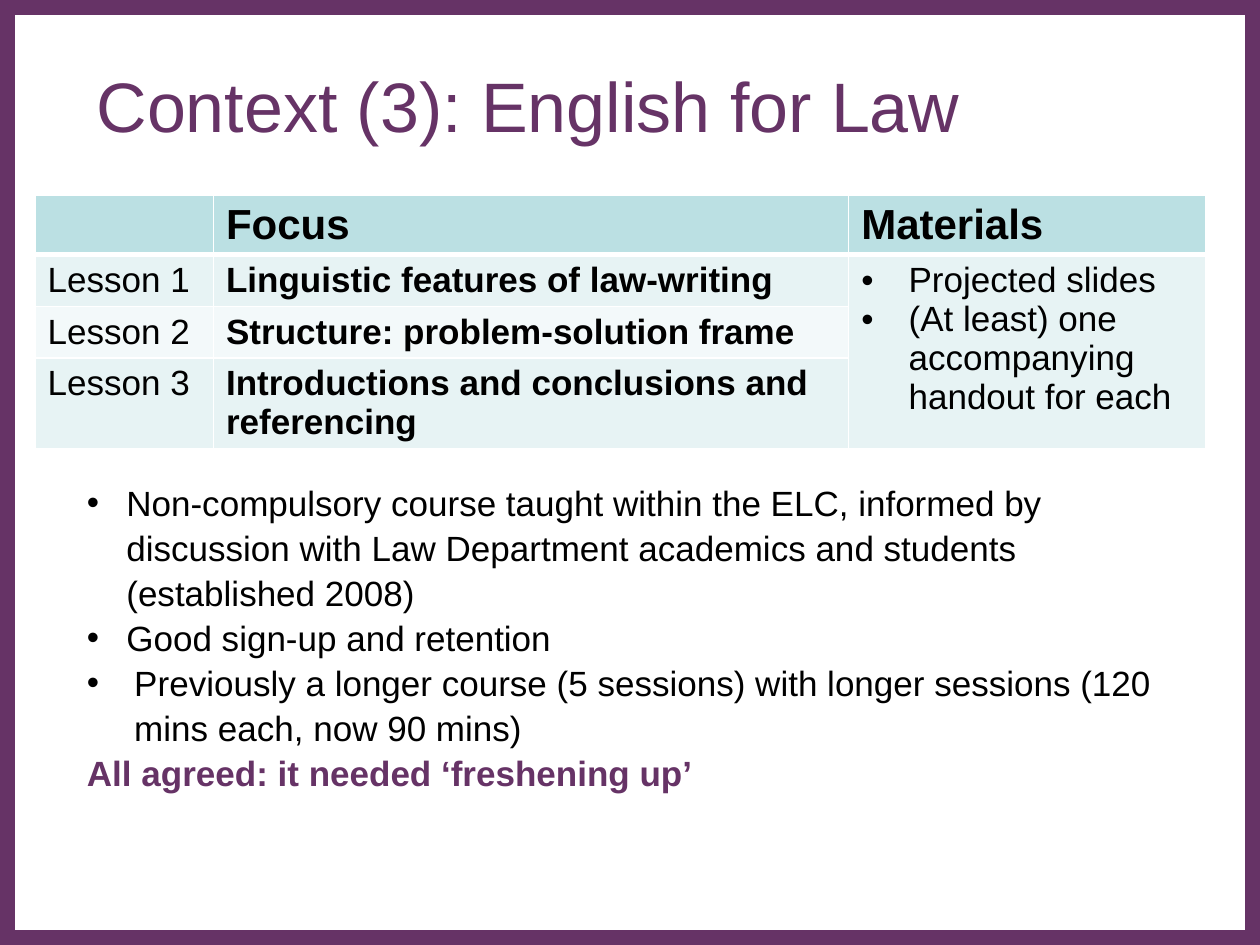
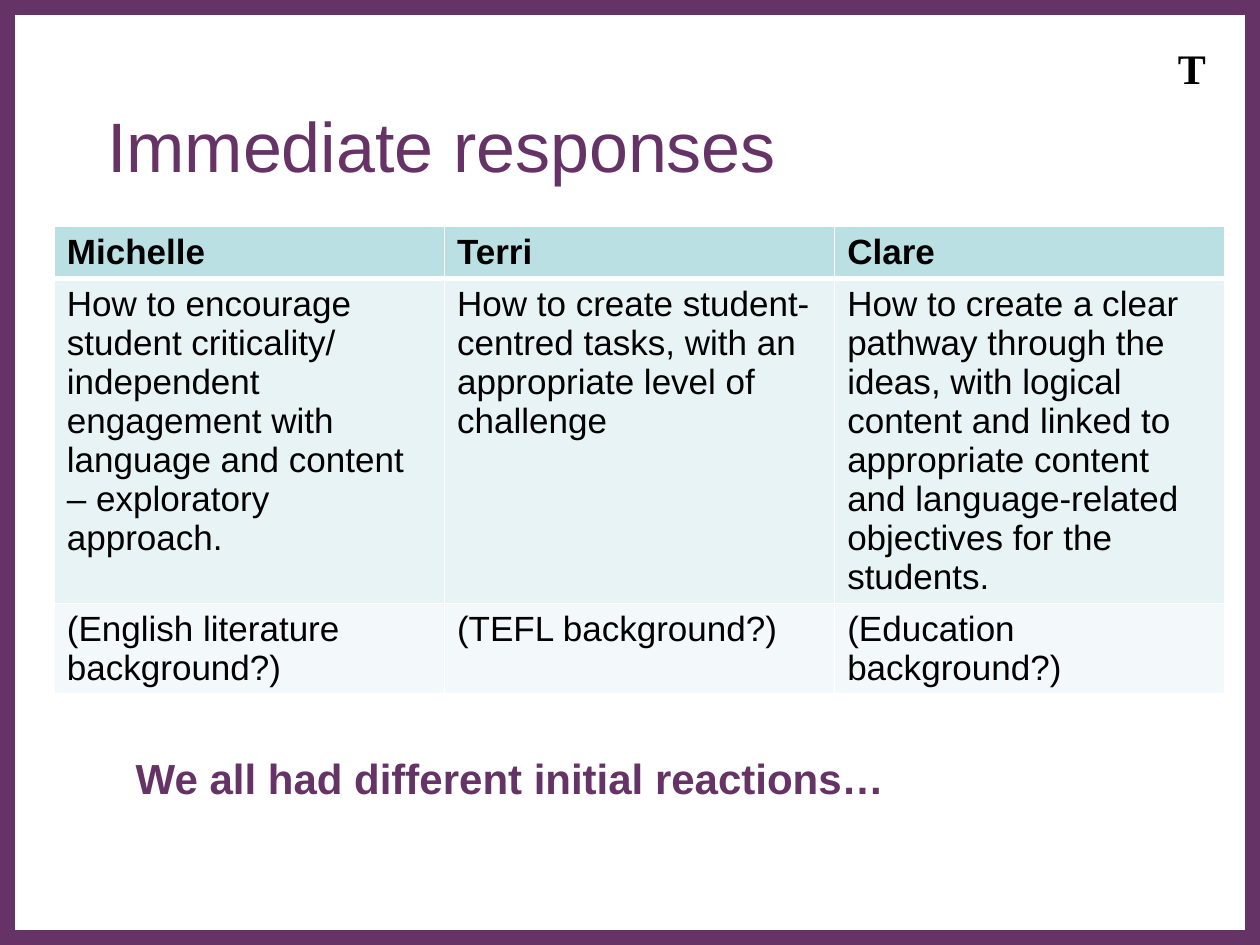
from lxml import etree
from pptx import Presentation
from pptx.dml.color import RGBColor
from pptx.enum.shapes import MSO_SHAPE
from pptx.enum.text import MSO_ANCHOR, MSO_AUTO_SIZE, PP_ALIGN
from pptx.oxml.ns import qn
from pptx.util import Pt

RECTANGLE = MSO_SHAPE.RECTANGLE
MIDDLE, TOP = MSO_ANCHOR.MIDDLE, MSO_ANCHOR.TOP
NO_AUTOFIT = MSO_AUTO_SIZE.NONE
LEFT = PP_ALIGN.LEFT

COLORS = {"purple": "663366", "white": "FFFFFF", "black": "000000",
          "header": "BBE0E3", "odd": "E7F3F4", "even": "F3F9FA"}
PAGE_WIDTH, PAGE_HEIGHT, FRAME = 720, 540, 8.64
TITLE_AND_BODY, TITLE_ONLY = 1, 5
TITLE_SIZE, HEADING_SIZE, TEXT_SIZE = 40, 24, 20
ROW_HEIGHT = 29.2


def color(name):
    return RGBColor.from_string(COLORS[name])


class Deck:
    """Holds the shared style and the current page."""

    def __init__(self):
        self.presentation = Presentation()
        self.presentation.slide_width = Pt(PAGE_WIDTH)
        self.presentation.slide_height = Pt(PAGE_HEIGHT)
        self.page = None

    def add_page(self, layout, title, left, top):
        layouts = self.presentation.slide_layouts
        first = self.page is None
        self.page = self.presentation.slides.add_slide(layouts[layout])
        if first:
            self.add_master_frame()
        box = self.page.shapes.title
        self.place(box, left, top, 612, 90)
        box.text_frame.vertical_anchor = MIDDLE
        box.text_frame.auto_size = NO_AUTOFIT
        self.set_lines(box.text_frame, [title], TITLE_SIZE, "purple")

    def add_master_frame(self):
        """Put the purple border and white sheet on the master, behind all else."""
        tree = self.presentation.slide_master.shapes._spTree
        for order, (name, inset) in enumerate([("purple", 0), ("white", FRAME)]):
            panel = self.page.shapes.add_shape(
                RECTANGLE, Pt(inset), Pt(inset),
                Pt(PAGE_WIDTH - 2 * inset), Pt(PAGE_HEIGHT - 2 * inset))
            panel.shadow.inherit = False
            panel.fill.solid()
            panel.fill.fore_color.rgb = color(name)
            panel.line.fill.background()
            panel._element.nvSpPr.cNvPr.set("id", str(101 + order))
            tree.insert(2 + order, panel._element)

    def place(self, box, left, top, width, height):
        box.left, box.top = Pt(left), Pt(top)
        box.width, box.height = Pt(width), Pt(height)

    def style(self, para, size, ink="black", bold=False, font="Arial", indent=None):
        """Format a paragraph; an indent gives it a hanging bullet."""
        properties = para._p.get_or_add_pPr()
        hang = Pt(indent or 0)
        properties.set("marL", str(hang))
        properties.set("indent", str(-hang))
        if indent:
            etree.SubElement(properties, qn("a:buFont"), typeface="Arial")
            etree.SubElement(properties, qn("a:buChar"), char="•")
        else:
            etree.SubElement(properties, qn("a:buNone"))
        para.alignment = LEFT
        para.space_before = Pt(0)
        para.font.name, para.font.size, para.font.bold = font, Pt(size), bold
        para.font.color.rgb = color(ink)

    def set_lines(self, frame, lines, *style, **options):
        frame.text = "\n".join(lines)
        for para in frame.paragraphs:
            self.style(para, *style, **options)

    def add_list(self, items, left, top, width, height):
        """Fill the body placeholder with (text, style options) items."""
        box = self.page.placeholders[1]
        self.place(box, left, top, width, height)
        frame = box.text_frame
        frame.auto_size, frame.vertical_anchor = NO_AUTOFIT, TOP
        frame.text = "\n".join(text for text, _ in items)
        for para, (_, options) in zip(frame.paragraphs, items):
            self.style(para, TEXT_SIZE, **options)
            para.line_spacing = 1.07

    def add_text(self, text, left, top, width, height, ink, font="Arial"):
        box = self.page.shapes.add_textbox(Pt(left), Pt(top), Pt(width), Pt(height))
        box.text_frame.word_wrap = True
        self.set_lines(box.text_frame, [text], HEADING_SIZE, ink, True, font)

    def add_border(self, cell, side, width):
        line = etree.SubElement(cell._tc.get_or_add_tcPr(), qn("a:ln" + side),
                                w=str(Pt(width)))
        fill = etree.SubElement(line, qn("a:solidFill"))
        etree.SubElement(fill, qn("a:srgbClr"), val=COLORS["white"])

    def add_table(self, rows, left, top, widths, header_size=TEXT_SIZE,
                  bold_column=None):
        """Cells are lists of lines; returns the table."""
        table = self.page.shapes.add_table(
            len(rows), len(widths), Pt(left), Pt(top),
            Pt(sum(widths)), Pt(ROW_HEIGHT * len(rows))).table
        for column, width in zip(table.columns, widths):
            column.width = Pt(width)
        for r, row in enumerate(rows):
            table.rows[r].height = Pt(ROW_HEIGHT)
            band = "header" if r == 0 else "odd" if r % 2 else "even"
            for c, lines in enumerate(row):
                cell = table.cell(r, c)
                for side in "LRTB":
                    heavy = (r, side) in [(0, "B"), (1, "T")]
                    self.add_border(cell, side, 3 if heavy else 1)
                cell.fill.solid()
                cell.fill.fore_color.rgb = color(band)
                if lines:
                    self.set_lines(cell.text_frame, lines,
                                   TEXT_SIZE if r else header_size,
                                   bold=r == 0 or c == bold_column)
        return table


def build_context(deck):
    deck.add_page(TITLE_AND_BODY, "Context (3): English for Law", 48, 15)

    # Lesson overview
    materials = ["Projected slides", "(At least) one accompanying handout for each"]
    table = deck.add_table([
        [[], ["Focus"], ["Materials"]],
        [["Lesson 1"], ["Linguistic features of law-writing"], []],
        [["Lesson 2"], ["Structure: problem-solution frame"], []],
        [["Lesson 3"], ["Introductions and conclusions and referencing"], []],
    ], 20, 111.5, [102, 363, 204], HEADING_SIZE, bold_column=1)
    shared_cell = table.cell(1, 2)
    shared_cell.merge(table.cell(3, 2))
    deck.set_lines(shared_cell.text_frame, materials, TEXT_SIZE, indent=27)

    # Course background
    deck.add_list([
        ("Non-compulsory course taught within the ELC, informed by discussion "
         "with Law Department academics and students (established 2008)",
         {"indent": 22.5}),
        ("Good sign-up and retention", {"indent": 22.5}),
        ("Previously a longer course (5 sessions) with longer sessions "
         "(120 mins each, now 90 mins)", {"indent": 27}),
        ("All agreed: it needed ‘freshening up’", {"ink": "purple", "bold": True}),
    ], 42.5, 270, 646.5, 177)


def build_responses(deck):
    deck.add_page(TITLE_ONLY, "Immediate responses", 54, 37.5)

    # Each teacher's response
    deck.add_table([
        [["Michelle"], ["Terri"], ["Clare"]],
        [["How to encourage student criticality/",
          "independent engagement with language and content – exploratory approach."],
         ["How to create student-centred tasks, with an appropriate level of "
          "challenge"],
         ["How to create a clear pathway through the ideas, with logical content "
          "and linked to appropriate content and language-related objectives "
          "for the students."]],
        [["(English literature background?)"], ["(TEFL background?)"],
         ["(Education background?)"]],
    ], 31, 129.5, [223] * 3)

    # Closing remark and speaker initial
    deck.add_text("We all had different initial reactions…",
                  70.5, 426.5, 601, 36, "purple")
    deck.add_text("T", 666, 21, 28, 36, "black", "Times New Roman")


def main():
    deck = Deck()
    build_context(deck)
    build_responses(deck)
    deck.presentation.save("out.pptx")


if __name__ == "__main__":
    main()
